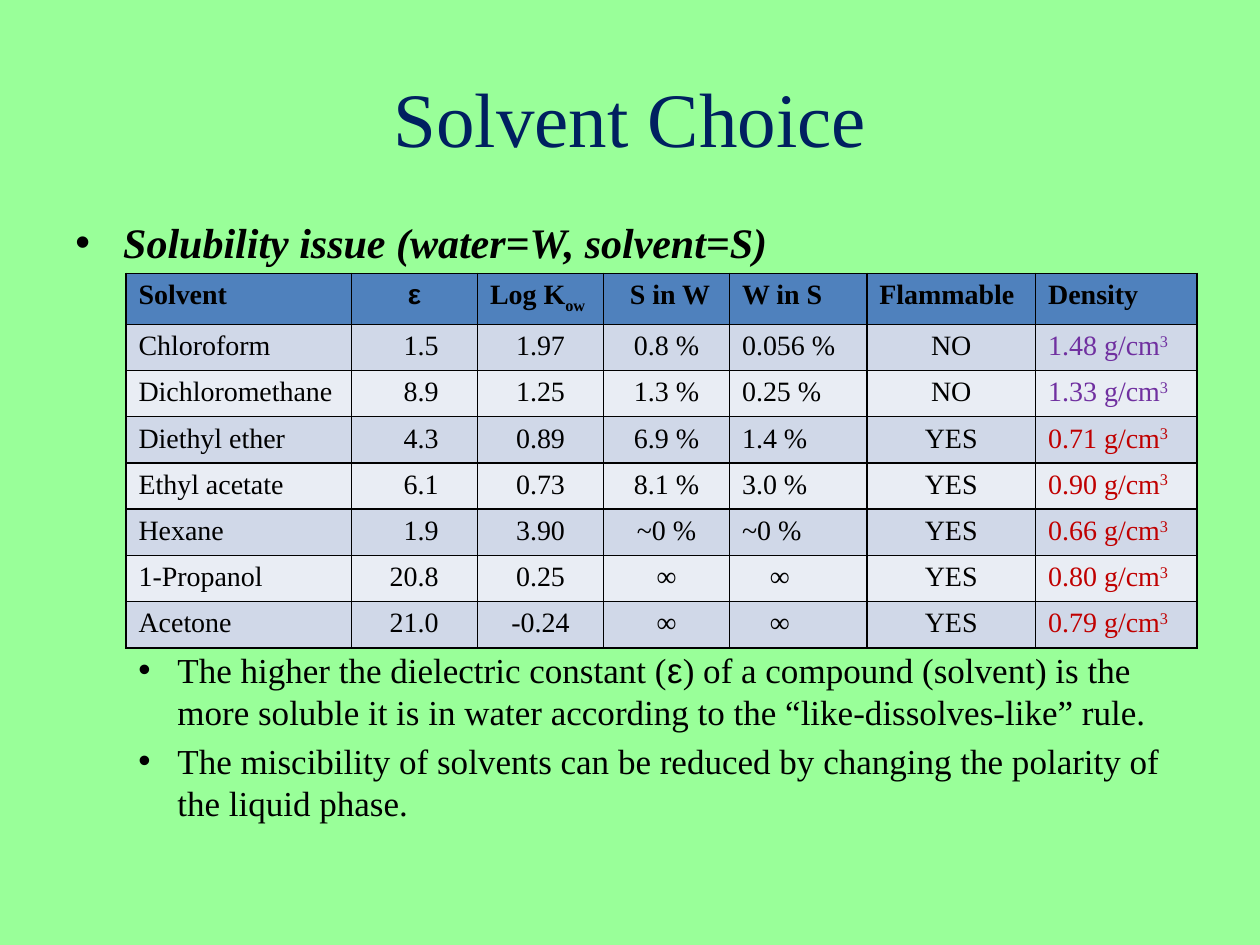
from lxml import etree
from pptx import Presentation
from pptx.dml.color import RGBColor
from pptx.enum.text import MSO_ANCHOR, PP_ALIGN
from pptx.oxml.ns import qn
from pptx.util import Inches, Pt

LEFT, CENTER, RIGHT = PP_ALIGN.LEFT, PP_ALIGN.CENTER, PP_ALIGN.RIGHT
MIDDLE = MSO_ANCHOR.MIDDLE
TITLE_ONLY = 5
SERIF, SANS = "Times New Roman", "Arial"
COLORS = {
    "background": "99FF99",
    "title": "002060",
    "text": "000000",
    "header": "4F81BD",
    "odd": "D0D8E8",
    "even": "E9EDF4",
    "sinks": "7030A0",
    "floats": "C00000",
}
COLUMN_WIDTHS = [1.79, 1, 1, 1, 1.09, 1.34, 1.28]
ROW_HEIGHT = 0.33
HEADERS = ["Solvent", "ε", "Log K", "S in W", "W in S", "Flammable", "Density"]
HEADER_ALIGN = [LEFT, CENTER, LEFT, LEFT, LEFT, LEFT, LEFT]
DATA_ALIGN = [LEFT, RIGHT, CENTER, CENTER, LEFT, CENTER, LEFT]
SOLVENTS = [
    ["Chloroform", "1.5", "1.97", "0.8 %", "0.056 %", "NO", "1.48"],
    ["Dichloromethane", "8.9", "1.25", "1.3 %", "0.25 %", "NO", "1.33"],
    ["Diethyl ether", "4.3", "0.89", "6.9 %", "1.4 %", "YES", "0.71"],
    ["Ethyl acetate", "6.1", "0.73", "8.1 %", "3.0 %", "YES", "0.90"],
    ["Hexane", "1.9", "3.90", "~0 %", "~0 %", "YES", "0.66"],
    ["1-Propanol", "20.8", "0.25", "∞", "∞", "YES", "0.80"],
    ["Acetone", "21.0", "-0.24", "∞", "∞", "YES", "0.79"],
]
BULLETS = [
    {
        "runs": ["Solubility issue (water=W, solvent=S)"],
        "font": {"size": Pt(24), "bold": True, "italic": True},
        "indent": (0.38, 0.38), "level": 0, "before": 3,
    },
    {
        "runs": [
            "The higher the dielectric constant (", "ε",
            ") of a compound (solvent) is the more soluble it is in water "
            "according to the “like-dissolves-like” rule.",
        ],
        "font": {"size": Pt(20)},
        "indent": (0.81, 0.31), "level": 1, "before": 218,
    },
    {
        "runs": ["The miscibility of solvents can be reduced by changing "
                 "the polarity of the liquid phase."],
        "font": {"size": Pt(20)},
        "indent": (0.81, 0.31), "level": 1, "before": 4,
    },
]


def rgb(key):
    return RGBColor.from_string(COLORS[key])


def add_run(p, text, color="text", baseline=0, **font):
    r = p.add_run()
    r.text = text
    font.setdefault("name", SANS if text == "ε" else SERIF)
    for name, value in font.items():
        setattr(r.font, name, value)
    r.font.color.rgb = rgb(color)
    if baseline:
        r.font._element.set("baseline", str(baseline * 1000))


def add_title(s, text):
    sp = s.shapes.title
    box = {"left": 0.5, "top": 0.3, "width": 9, "height": 1.25}
    for name, value in box.items():
        setattr(sp, name, Inches(value))
    tf = sp.text_frame
    tf.vertical_anchor = MIDDLE
    p = tf.paragraphs[0]
    p.alignment = CENTER
    add_run(p, text, "title", size=Pt(44))


def set_bullet(p, left, hanging):
    pPr = p._p.get_or_add_pPr()
    pPr.set("marL", str(Inches(left)))
    pPr.set("indent", str(-Inches(hanging)))
    etree.SubElement(pPr, qn("a:buFont"), typeface=SANS)
    etree.SubElement(pPr, qn("a:buChar"), char="•")


def add_body(s):
    sp = s.shapes.add_textbox(Inches(0.5), Inches(1.67), Inches(9), Inches(5.5))
    tf = sp.text_frame
    tf.word_wrap = True
    for i, bullet in enumerate(BULLETS):
        p = tf.add_paragraph() if i else tf.paragraphs[0]
        p.level = bullet["level"]
        p.space_before = Pt(bullet["before"])
        set_bullet(p, *bullet["indent"])
        for text in bullet["runs"]:
            add_run(p, text, **bullet["font"])


def set_borders(cell):
    tcPr = cell._tc.get_or_add_tcPr()
    for side in ("lnL", "lnR", "lnT", "lnB"):
        ln = etree.SubElement(tcPr, qn(f"a:{side}"), w=str(Pt(1)))
        fill = etree.SubElement(ln, qn("a:solidFill"))
        etree.SubElement(fill, qn("a:srgbClr"), val=COLORS["text"])


def format_cell(cell, fill, align):
    set_borders(cell)
    cell.fill.solid()
    cell.fill.fore_color.rgb = rgb(fill)
    p = cell.text_frame.paragraphs[0]
    p.alignment = align
    return p


def fill_header(table):
    for col, (text, align) in enumerate(zip(HEADERS, HEADER_ALIGN)):
        cell = table.cell(0, col)
        p = format_cell(cell, "header", align)
        font = {"size": Pt(16), "bold": True}
        add_run(p, text, **font)
        if text == "Log K":
            add_run(p, "ow", baseline=-25, **font)
        elif text == "S in W":
            cell.margin_left = Inches(0.21)


def fill_solvent(table, row, values):
    band = "odd" if row % 2 else "even"
    font = {"size": Pt(16), "bold": False}
    for col, (header, text, align) in enumerate(zip(HEADERS, values, DATA_ALIGN)):
        cell = table.cell(row, col)
        p = format_cell(cell, band, align)
        if header == "Density":
            color = "sinks" if float(text) > 1 else "floats"
            add_run(p, f"{text} g/cm", color, **font)
            add_run(p, "3", color, baseline=30, **font)
            continue
        add_run(p, text, **font)
        if header == "ε":
            cell.margin_right = Inches(0.31)
        elif header == "W in S" and text == "∞":
            cell.margin_left = Inches(0.32)


def add_solvent_table(s):
    rows = len(SOLVENTS) + 1
    table = s.shapes.add_table(
        rows, len(HEADERS), Inches(1), Inches(2.17),
        Inches(sum(COLUMN_WIDTHS)), Inches(ROW_HEIGHT * rows),
    ).table
    table.horz_banding = False
    for column, width in zip(table.columns, COLUMN_WIDTHS):
        column.width = Inches(width)
    fill_header(table)
    for row, values in enumerate(SOLVENTS, 1):
        fill_solvent(table, row, values)


def main():
    prs = Presentation()
    prs.slide_width, prs.slide_height = Inches(10), Inches(7.5)
    s = prs.slides.add_slide(prs.slide_layouts[TITLE_ONLY])
    s.background.fill.solid()
    s.background.fill.fore_color.rgb = rgb("background")
    add_title(s, "Solvent Choice")
    add_body(s)
    add_solvent_table(s)
    prs.save("out.pptx")


if __name__ == "__main__":
    main()
